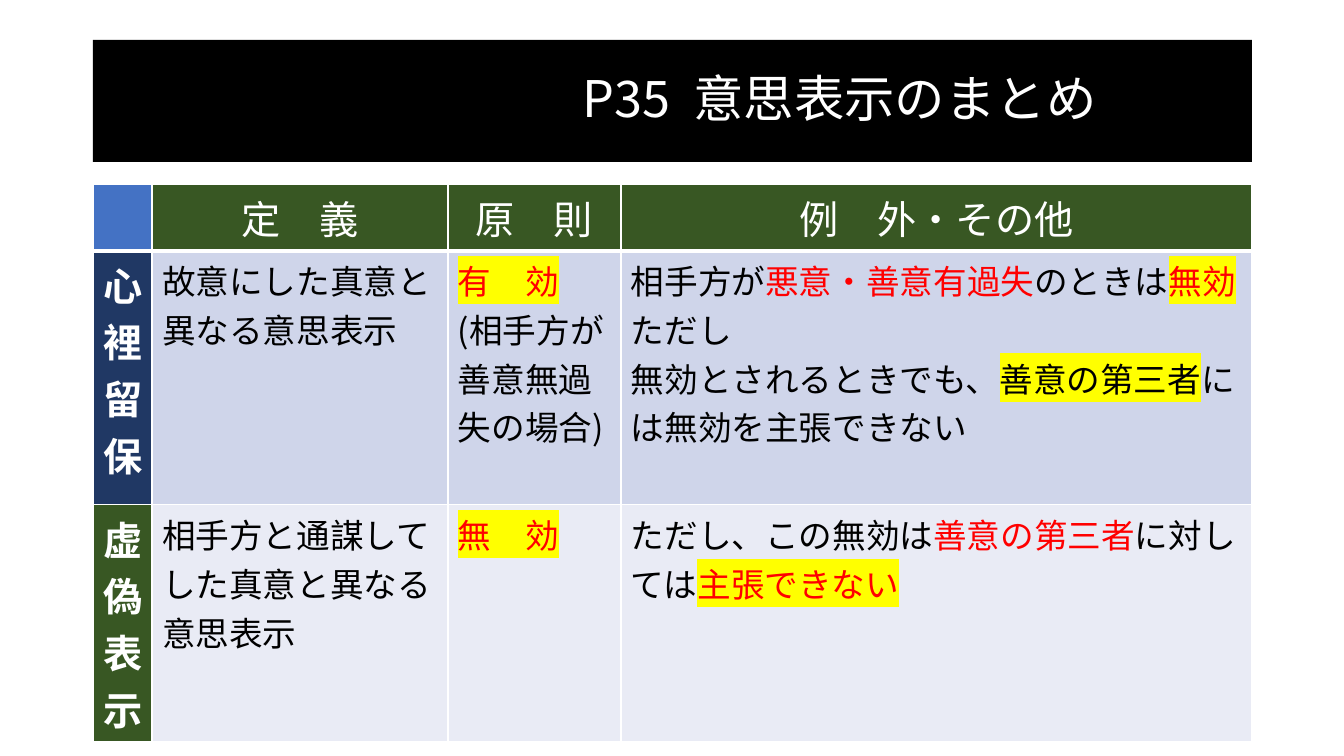
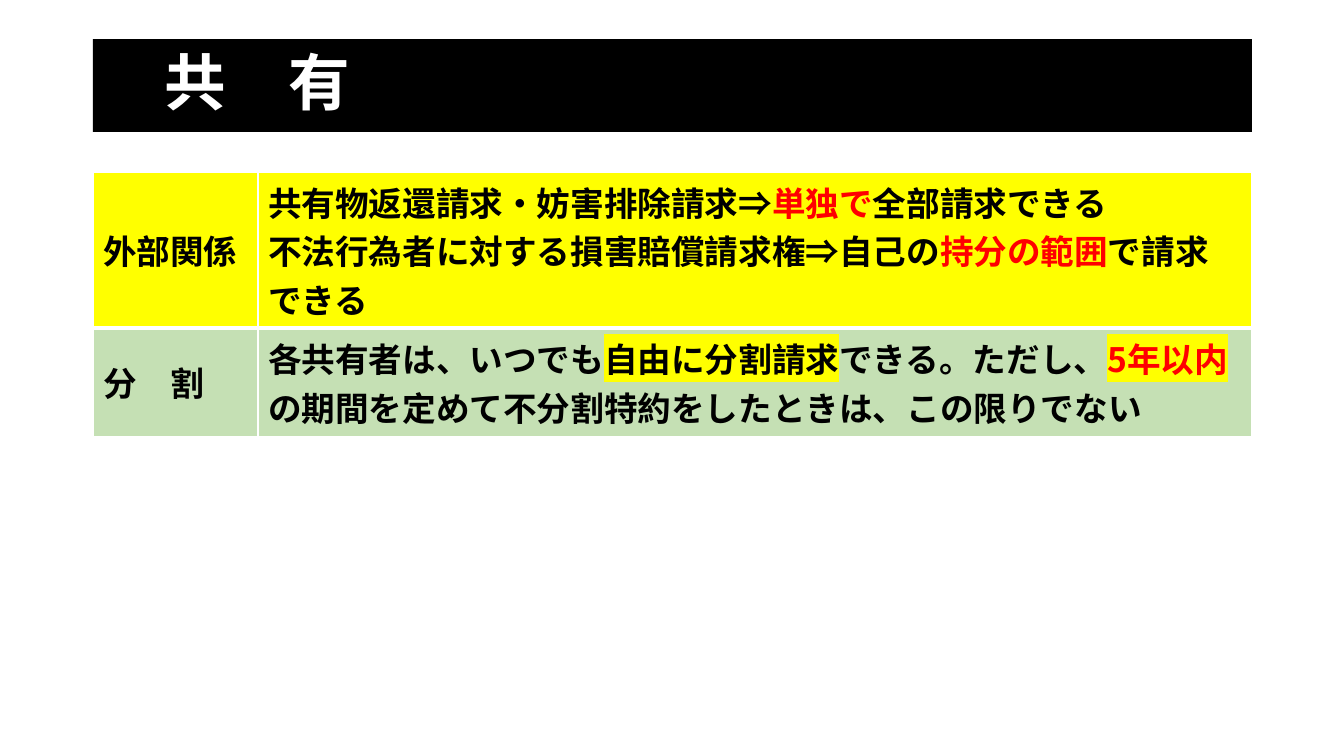
from dataclasses import dataclass

from lxml.etree import SubElement
from pptx import Presentation
from pptx.dml.color import RGBColor as Color
from pptx.enum.shapes import MSO_SHAPE as Shape
from pptx.enum.text import MSO_ANCHOR as Anchor, PP_ALIGN as Align
from pptx.oxml.ns import qn
from pptx.util import Emu, Pt


@dataclass(frozen=True)
class Theme:
    font: str = "Noto Sans CJK JP"
    white: str = "FFFFFF"
    black: str = "000000"
    red: str = "FF0000"
    yellow: str = "FFFF00"
    blue: str = "4472C4"
    navy: str = "203864"
    green: str = "385723"
    pale_green: str = "C5E0B4"
    band_dark: str = "CFD5EA"
    band_light: str = "E9EBF5"
    title_large: int = 44
    title_small: int = 36
    heading: int = 28
    body: int = 24
    thin_line: int = 1
    thick_line: int = 3


@dataclass(frozen=True)
class Box:
    left: int
    top: int
    width: int
    height: int


@dataclass(frozen=True)
class CellStyle:
    fill: str
    size: int = 24
    color: str = "000000"
    bold: bool = False
    align: Align = Align.LEFT
    anchor: Anchor = Anchor.TOP


THEME = Theme()
EMU_PER_PX = 914400 / 100.8
SLIDE_BOX = Box(0, 0, 1344, 756)
MARGIN = 93
CONTENT_WIDTH = 1159


def px(length):
    return Emu(round(length * EMU_PER_PX))


def place(box):
    return px(box.left), px(box.top), px(box.width), px(box.height)


def red(text):
    return text, THEME.red, False


def marked(text):
    return text, None, True


def red_marked(text):
    return text, THEME.red, True


def style_paragraph(paragraph, size, bold):
    paragraph.font.size = Pt(size)
    paragraph.font.bold = bold
    paragraph.font.name = THEME.font
    defaults = paragraph._p.get_or_add_pPr().find(qn("a:defRPr"))
    SubElement(defaults, qn("a:ea")).set("typeface", THEME.font)


def add_run(paragraph, text, color, highlighted=False):
    run = paragraph.add_run()
    run.text = text
    run.font.color.rgb = Color.from_string(color)
    if highlighted:
        highlight = SubElement(run._r.get_or_add_rPr(), qn("a:highlight"))
        SubElement(highlight, qn("a:srgbClr")).set("val", THEME.yellow)
    return run


def add_title_band(slide, box, words, size, bold, indent, gap=0):
    band = slide.shapes.add_shape(Shape.RECTANGLE, *place(box))
    band.shadow.inherit = False
    band.fill.solid()
    band.fill.fore_color.rgb = Color.from_string(THEME.black)
    band.line.fill.background()
    frame = band.text_frame
    frame.word_wrap = True
    frame.vertical_anchor = Anchor.MIDDLE
    paragraph = frame.paragraphs[0]
    paragraph.alignment = Align.LEFT
    paragraph.line_spacing = 0.9
    paragraph._p.get_or_add_pPr().set("marL", str(px(indent)))
    style_paragraph(paragraph, size, bold)
    for index, word in enumerate(words):
        if index:
            space = add_run(paragraph, " ", THEME.white)
            space._r.get_or_add_rPr().set("spc", str(gap * 100))
        add_run(paragraph, word, THEME.white)


def set_borders(cell, bottom_width):
    properties = cell._tc.get_or_add_tcPr()
    for index, side in enumerate("LRTB"):
        width = bottom_width if side == "B" else THEME.thin_line
        line = SubElement(properties, qn(f"a:ln{side}"))
        line.set("w", str(Pt(width)))
        fill = SubElement(line, qn("a:solidFill"))
        SubElement(fill, qn("a:srgbClr")).set("val", THEME.white)
        properties.insert(index, line)


def fill_cell(cell, paragraphs, style, bottom_width):
    cell.fill.solid()
    cell.fill.fore_color.rgb = Color.from_string(style.fill)
    cell.vertical_anchor = style.anchor
    set_borders(cell, bottom_width)
    frame = cell.text_frame
    for index, parts in enumerate(paragraphs):
        paragraph = frame.add_paragraph() if index else frame.paragraphs[0]
        paragraph.alignment = style.align
        style_paragraph(paragraph, style.size, style.bold)
        for part in parts:
            text, color, highlighted = (part, None, False) if isinstance(part, str) else part
            add_run(paragraph, text, color or style.color, highlighted)


def add_summary_table(slide, left, top, column_widths, row_heights, rows):
    box = Box(left, top, sum(column_widths), sum(row_heights))
    table = slide.shapes.add_table(len(rows), len(column_widths), *place(box)).table
    table.first_row = False
    table.horz_banding = False
    for column, width in zip(table.columns, column_widths):
        column.width = px(width)
    for row_index, (height, cells) in enumerate(zip(row_heights, rows)):
        table.rows[row_index].height = px(height)
        bottom_width = THEME.thin_line if row_index else THEME.thick_line
        for column_index, (paragraphs, style) in enumerate(cells):
            fill_cell(table.cell(row_index, column_index), paragraphs, style, bottom_width)


def build_intent_slide(slide, box):
    band = Box(box.left + MARGIN, box.top + 40, CONTENT_WIDTH, 122)
    add_title_band(slide, band, ["P35", "意思表示のまとめ"],
                   THEME.title_small, False, indent=480, gap=8)

    header = CellStyle(THEME.green, THEME.heading, THEME.white, align=Align.CENTER)
    navy_label = CellStyle(THEME.navy, THEME.heading, THEME.white, bold=True)
    green_label = CellStyle(THEME.green, THEME.heading, THEME.white, bold=True)
    dark = CellStyle(THEME.band_dark, THEME.body)
    light = CellStyle(THEME.band_light, THEME.body)
    headings = ["定　義", "原　則", "例　外・その他"]
    rows = [
        [([], CellStyle(THEME.blue))] + [([[heading]], header) for heading in headings],
        [
            ([["心裡留保"]], navy_label),
            ([["故意にした真意と異なる意思表示"]], dark),
            ([[red_marked("有　効")], ["(相手方が善意無過失の場合)"]], dark),
            ([
                ["相手方が", red("悪意・善意有過失"), "のときは", red_marked("無効")],
                ["ただし"],
                ["無効とされるときでも、", marked("善意の第三者"), "には無効を主張できない"],
            ], dark),
        ],
        [
            ([["虚偽表示"]], green_label),
            ([["相手方と通謀してした真意と異なる意思表示"]], light),
            ([[red_marked("無　効")]], light),
            ([["ただし、この無効は", red("善意の第三者"), "に対しては",
               red_marked("主張できない")]], light),
        ],
    ]
    add_summary_table(slide, box.left + MARGIN, box.top + 184,
                      [59, 296, 173, 631], [66, 254, 237], rows)


def build_sharing_slide(slide, box):
    band = Box(box.left + MARGIN, box.top + 39, CONTENT_WIDTH, 93)
    add_title_band(slide, band, ["共　有"], THEME.title_large, True, indent=62)

    yellow = CellStyle(THEME.yellow, THEME.body, bold=True, anchor=Anchor.MIDDLE)
    green = CellStyle(THEME.pale_green, THEME.body, bold=True, anchor=Anchor.MIDDLE)
    rows = [
        [
            ([["外部関係"]], yellow),
            ([
                ["共有物返還請求・妨害排除請求⇒", red("単独で"), "全部請求できる"],
                ["不法行為者に対する損害賠償請求権⇒自己の", red("持分の範囲"), "で請求できる"],
            ], yellow),
        ],
        [
            ([["分　割"]], green),
            ([["各共有者は、いつでも", marked("自由に分割請求"), "できる。ただし、",
               red_marked("5年以内"),
               "の期間を定めて不分割特約をしたときは、この限りでない"]], green),
        ],
    ]
    add_summary_table(slide, box.left + MARGIN, box.top + 172,
                      [165, 994], [156, 108], rows)


def main():
    presentation = Presentation()
    presentation.slide_width = px(SLIDE_BOX.width)
    presentation.slide_height = px(SLIDE_BOX.height)
    blank_layout = presentation.slide_layouts[6]
    for build in (build_intent_slide, build_sharing_slide):
        build(presentation.slides.add_slide(blank_layout), SLIDE_BOX)
    presentation.save("out.pptx")


if __name__ == "__main__":
    main()
